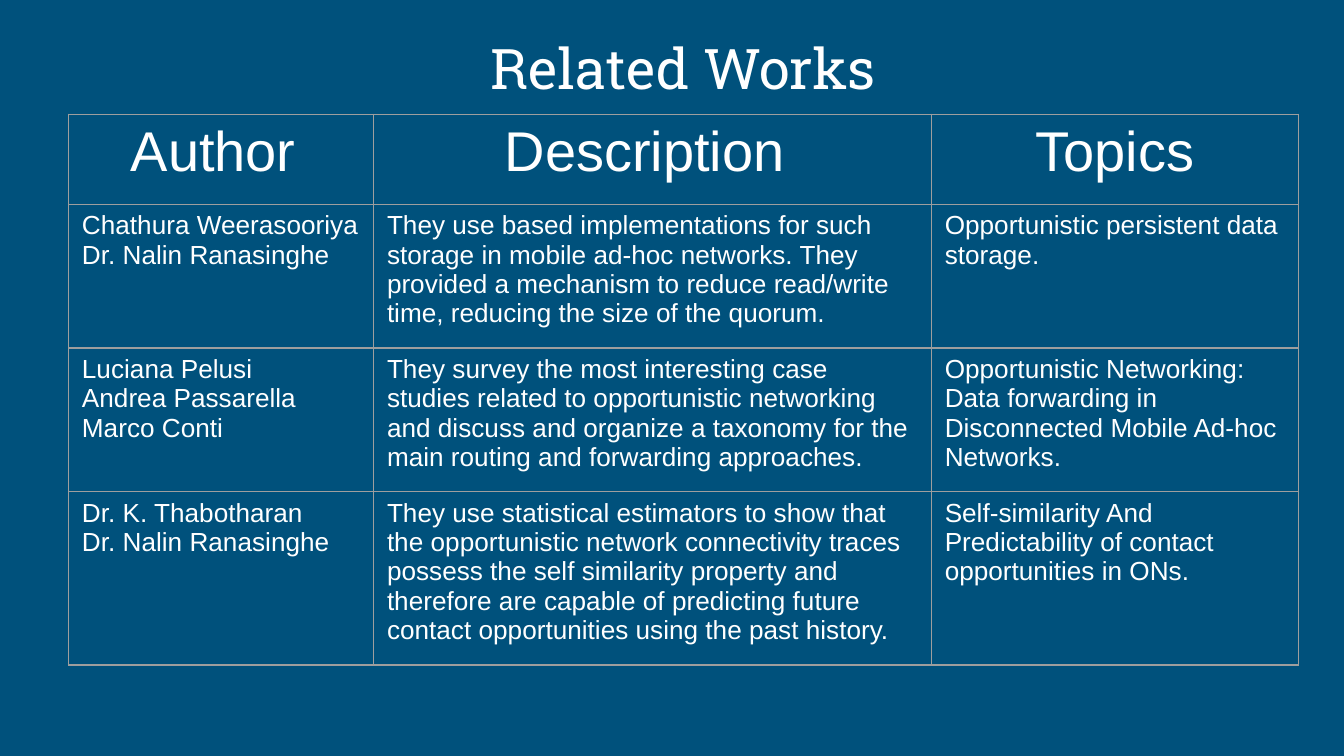
import pptx
import pptx.util
import pptx.dml.color
import pptx.enum.text
import pptx.oxml
import pptx.oxml.ns

Inches = pptx.util.Inches
Pt = pptx.util.Pt
RGBColor = pptx.dml.color.RGBColor
PP_ALIGN = pptx.enum.text.PP_ALIGN

NAVY = RGBColor(0x00, 0x51, 0x7C)
WHITE = RGBColor(0xFF, 0xFF, 0xFF)
GREY = RGBColor(0x9E, 0x9E, 0x9E)

COLUMN_WIDTHS = [2.27, 4.15, 2.73]
ROW_HEIGHTS = [0.67, 1.07, 1.07, 1.29]
# Each cell is a list of paragraphs.
WORKS = [
    [["Author "], ["Description "], ["Topics"]],
    [["Chathura Weerasooriya", "Dr. Nalin Ranasinghe"],
     ["They use based implementations for such storage in mobile ad-hoc "
      "networks. They provided a mechanism to reduce read/write time, "
      "reducing the size of the quorum."],
     ["Opportunistic persistent data storage."]],
    [["Luciana Pelusi", "Andrea Passarella", "Marco Conti"],
     ["They survey the most interesting case studies related to "
      "opportunistic networking and discuss and organize a taxonomy for the "
      "main routing and forwarding approaches."],
     ["Opportunistic Networking: Data forwarding in Disconnected Mobile "
      "Ad-hoc Networks."]],
    [["Dr. K. Thabotharan", "Dr. Nalin Ranasinghe"],
     ["They use statistical estimators to show that the opportunistic "
      "network connectivity traces possess the self similarity property and "
      "therefore are capable of predicting future contact opportunities "
      "using the past history."],
     ["Self-similarity And Predictability of contact opportunities in ONs."]],
]


def write_paragraphs(tf, lines, size, font, align):
    for i, line in enumerate(lines):
        p = tf.paragraphs[0] if i == 0 else tf.add_paragraph()
        p.alignment = align
        r = p.add_run()
        r.text = line
        r.font.size = Pt(size)
        r.font.name = font
        r.font.color.rgb = WHITE


def set_borders(cell, color, width):
    """Draw all four edges; the line elements must precede the cell fill."""
    tcPr = cell._tc.get_or_add_tcPr()
    for i, edge in enumerate(("lnL", "lnR", "lnT", "lnB")):
        tcPr.insert(i, pptx.oxml.parse_xml(
            f'<a:{edge} {pptx.oxml.ns.nsdecls("a")} w="{Pt(width)}">'
            f'<a:solidFill><a:srgbClr val="{color}"/></a:solidFill>'
            f'<a:prstDash val="solid"/></a:{edge}>'))


def add_title(slide, left, top, width, height):
    box = slide.shapes.add_textbox(
        Inches(left), Inches(top), Inches(width), Inches(height))
    tf = box.text_frame
    tf.word_wrap = True
    tf.vertical_anchor = pptx.enum.text.MSO_ANCHOR.BOTTOM
    tf.margin_left = tf.margin_right = Inches(0.1)
    tf.margin_top = tf.margin_bottom = Inches(0.1)
    write_paragraphs(tf, ["Related Works"], 30, "Roboto Slab", PP_ALIGN.CENTER)


def add_works_table(slide, left, top):
    frame = slide.shapes.add_table(
        len(ROW_HEIGHTS), len(COLUMN_WIDTHS), Inches(left), Inches(top),
        Inches(sum(COLUMN_WIDTHS)), Inches(sum(ROW_HEIGHTS)))
    table = frame.table
    table.first_row = table.horz_banding = False
    for column, width in zip(table.columns, COLUMN_WIDTHS):
        column.width = Inches(width)
    for row, height in zip(table.rows, ROW_HEIGHTS):
        row.height = Inches(height)
    for i, works in enumerate(WORKS):
        size, align = (30, PP_ALIGN.CENTER) if i == 0 else (14, PP_ALIGN.LEFT)
        for j, lines in enumerate(works):
            cell = table.cell(i, j)
            cell.margin_left = cell.margin_right = Inches(0.1)
            cell.margin_top = cell.margin_bottom = Inches(0.05)
            cell.fill.background()
            set_borders(cell, GREY, 0.75)
            write_paragraphs(cell.text_frame, lines, size, "Arial", align)


def main():
    prs = pptx.Presentation()
    prs.slide_width = Inches(10)
    prs.slide_height = prs.slide_width * 9 // 16
    slide = prs.slides.add_slide(prs.slide_layouts[6])
    slide.background.fill.solid()
    slide.background.fill.fore_color.rgb = NAVY
    add_title(slide, 0.51, 0.1, 9.15, 0.75)
    add_works_table(slide, 0.51, 0.85)
    prs.save("out.pptx")


if __name__ == "__main__":
    main()
